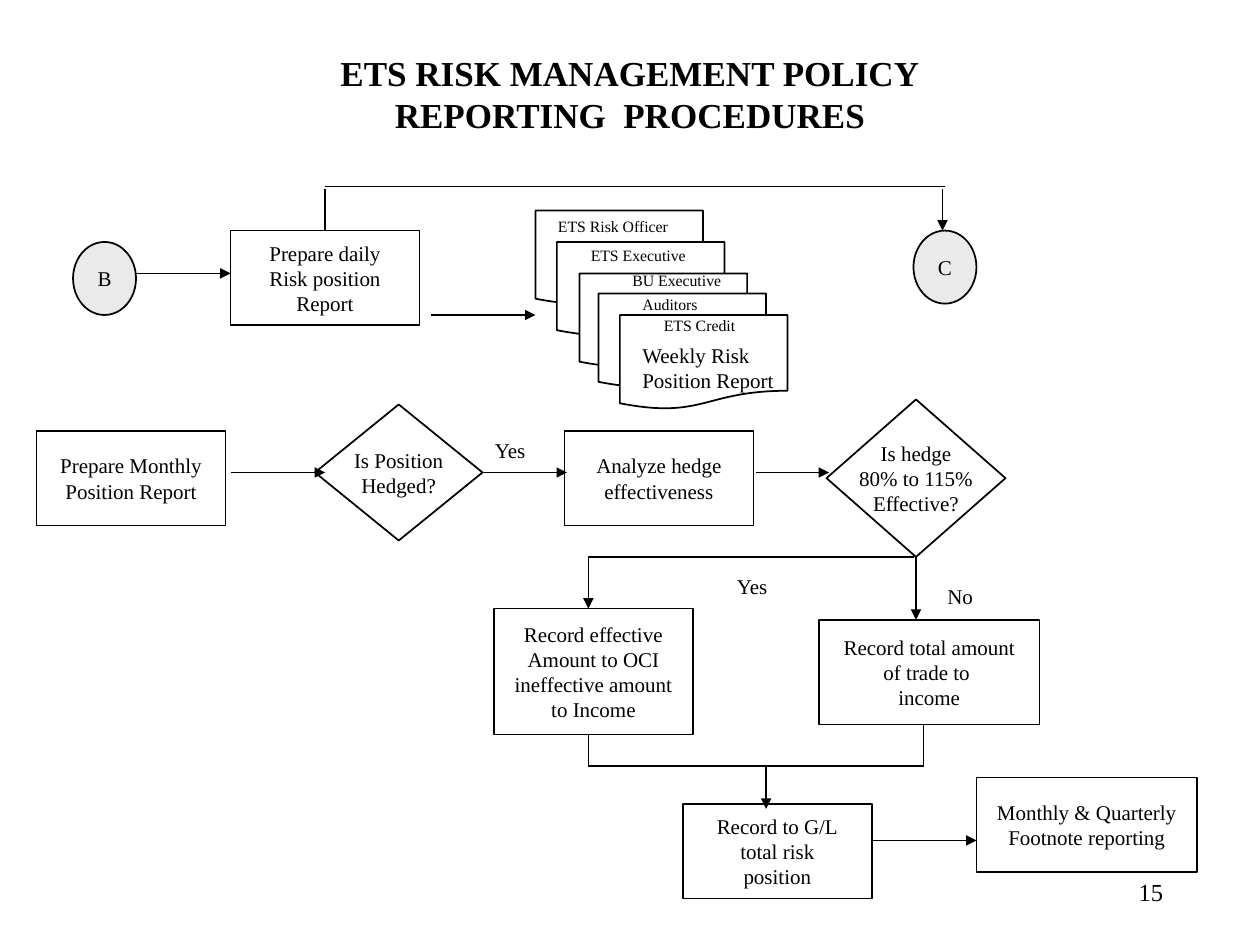
from dataclasses import dataclass
from typing import Any

import lxml.etree
import pptx
import pptx.dml.color
import pptx.enum.shapes
import pptx.enum.text
import pptx.oxml.ns
import pptx.util

Inches = pptx.util.Inches
Shape = pptx.enum.shapes.MSO_SHAPE
Align = pptx.enum.text.PP_ALIGN
Anchor = pptx.enum.text.MSO_ANCHOR

BLACK = pptx.dml.color.RGBColor(0x00, 0x00, 0x00)
WHITE = pptx.dml.color.RGBColor(0xFF, 0xFF, 0xFF)
GRAY = pptx.dml.color.RGBColor(0xEA, 0xEA, 0xEA)
FONT = "Times New Roman"
LINE_WIDTH = pptx.util.Pt(1)


def write(frame, lines, size, align, bold=False):
    frame.text = "\n".join(lines)
    for para in frame.paragraphs:
        para.alignment = align
        para.font.name = FONT
        para.font.size = pptx.util.Pt(size)
        para.font.bold = bold
        para.font.color.rgb = BLACK


@dataclass
class Region:
    """Part of the page; its parts are placed in inches from its corner."""
    page: Any
    left: float
    top: float

    def at(self, x, y):
        return Inches(self.left + x), Inches(self.top + y)

    def node(self, kind, x, y, width, height, *lines, fill=WHITE):
        shape = self.page.shapes.add_shape(
            kind, *self.at(x, y), Inches(width), Inches(height))
        shape.shadow.inherit = False
        shape.fill.solid()
        shape.fill.fore_color.rgb = fill
        shape.line.color.rgb = BLACK
        shape.line.width = LINE_WIDTH
        if lines:
            shape.text_frame.word_wrap = False
            shape.text_frame.vertical_anchor = Anchor.MIDDLE
            write(shape.text_frame, lines, 12, Align.CENTER)
        return shape

    def process(self, *args):
        return self.node(Shape.FLOWCHART_PROCESS, *args)

    def decision(self, *args):
        return self.node(Shape.FLOWCHART_DECISION, *args)

    def off_page(self, x, y, letter):
        self.node(Shape.FLOWCHART_CONNECTOR, x, y, 0.5, 0.58, letter, fill=GRAY)

    def label(self, x, y, width, height, *lines, size=12):
        box = self.page.shapes.add_textbox(
            *self.at(x, y), Inches(width), Inches(height))
        box.text_frame.word_wrap = True
        write(box.text_frame, lines, size, Align.LEFT)

    def line(self, x1, y1, x2, y2):
        link = self.page.shapes.add_connector(
            pptx.enum.shapes.MSO_CONNECTOR.STRAIGHT,
            *self.at(x1, y1), *self.at(x2, y2))
        link.line.color.rgb = BLACK
        link.line.width = LINE_WIDTH
        properties = link._element.spPr
        lxml.etree.SubElement(properties, pptx.oxml.ns.qn("a:effectLst"))
        return link

    def arrow(self, *ends):
        link = self.line(*ends)
        lxml.etree.SubElement(
            link.line._get_or_add_ln(), pptx.oxml.ns.qn("a:tailEnd"), type="triangle")
        return link


def add_heading(page, left, top, width, height, lines, size, align, bold=False):
    box = page.shapes.add_textbox(
        Inches(left), Inches(top), Inches(width), Inches(height))
    box.text_frame.word_wrap = True
    box.text_frame.vertical_anchor = Anchor.MIDDLE
    write(box.text_frame, lines, size, align, bold)


def add_daily_report(area):
    area.off_page(0, 0.44, "B")
    report = area.process(1.25, 0.35, 1.5, 0.75,
                          "Prepare daily", "Risk position", "Report")
    area.off_page(6.67, 0.35, "C")
    area.arrow(0.5, 0.69, 1.25, 0.69)
    area.arrow(2.84, 1.02, 3.67, 1.02)
    area.line(2, 0.35, 2, 0.02).begin_connect(report, 0)
    area.line(2, 0, 6.92, 0)
    area.arrow(6.9, 0.02, 6.9, 0.35)


def add_weekly_reports(area):
    """Stack the recipients' copies, then write their names on top."""
    for x, y in ((0, 0), (0.17, 0.25), (0.35, 0.5), (0.5, 0.66), (0.67, 0.83)):
        area.node(Shape.FLOWCHART_DOCUMENT, x, y, 1.33, 0.75)
    recipients = (
        (0.08, 0, "ETS Risk Officer"),
        (0.34, 0.23, "ETS Executive"),
        (0.67, 0.43, "BU Executive"),
        (0.75, 0.62, "Auditors"),
        (0.92, 0.79, "ETS Credit"),
    )
    for x, y, name in recipients:
        area.label(x, y, 1.15, 0.25, name, size=9)
    area.label(0.75, 1, 1.33, 0.5, "Weekly Risk", "Position Report")


def add_hedge_checks(area):
    """Draw the monthly row and return its last decision."""
    area.process(0, 0.25, 1.5, 0.75, "Prepare Monthly", "Position Report")
    hedged = area.decision(2.21, 0.04, 1.33, 1.08, "Is Position", "Hedged?")
    area.process(4.19, 0.25, 1.5, 0.75, "Analyze hedge", "effectiveness")
    effective = area.decision(6.27, 0, 1.42, 1.25,
                              "Is hedge", "80% to 115%", "Effective?")
    area.arrow(1.54, 0.58, 2.29, 0.58)
    area.arrow(3.54, 0.58, 4.21, 0.58).begin_connect(hedged, 3)
    area.arrow(5.71, 0.58, 6.29, 0.58)
    area.label(3.54, 0.25, 0.5, 0.3, "Yes")
    return effective


def add_recording(area, effective):
    area.process(0, 0.41, 1.58, 1, "Record effective", "Amount to OCI",
                 "ineffective amount", "to Income")
    area.process(2.58, 0.5, 1.75, 0.83, "Record total amount", "of trade to ", "income")
    area.label(1.83, 0.08, 0.5, 0.3, "Yes")
    area.label(3.5, 0.16, 0.5, 0.3, "No")
    area.arrow(3.35, 0, 3.35, 0.5).begin_connect(effective, 2)
    area.line(3.33, 0, 0.75, 0)
    area.arrow(0.75, 0, 0.75, 0.41)


def add_reporting(area):
    area.process(1.5, 0.55, 1.5, 0.75, "Record to G/L", "total risk", "position")
    area.process(3.83, 0.34, 1.75, 0.75, "Monthly & Quarterly", "Footnote reporting")
    area.line(0.75, 0, 0.75, 0.25)
    area.line(3.41, -0.08, 3.41, 0.25)
    area.line(0.75, 0.25, 3.41, 0.25)
    area.arrow(2.16, 0.25, 2.16, 0.59)
    area.arrow(3, 0.84, 3.83, 0.84)


def main():
    deck = pptx.Presentation()
    deck.slide_width, deck.slide_height = Inches(10), Inches(7.5)
    page = deck.slides.add_slide(deck.slide_layouts[6])
    add_heading(page, 0.75, 0.33, 8.5, 0.83,
                ["ETS RISK MANAGEMENT POLICY\vREPORTING  PROCEDURES"],
                20, Align.CENTER, bold=True)
    add_daily_report(Region(page, 0.58, 1.48))
    add_weekly_reports(Region(page, 4.25, 1.67))
    effective = add_hedge_checks(Region(page, 0.29, 3.17))
    add_recording(Region(page, 3.92, 4.42), effective)
    add_reporting(Region(page, 3.92, 5.83))
    add_heading(page, 7.25, 6.83, 2.08, 0.5, ["15"], 14, Align.RIGHT)
    deck.save("out.pptx")


if __name__ == "__main__":
    main()
